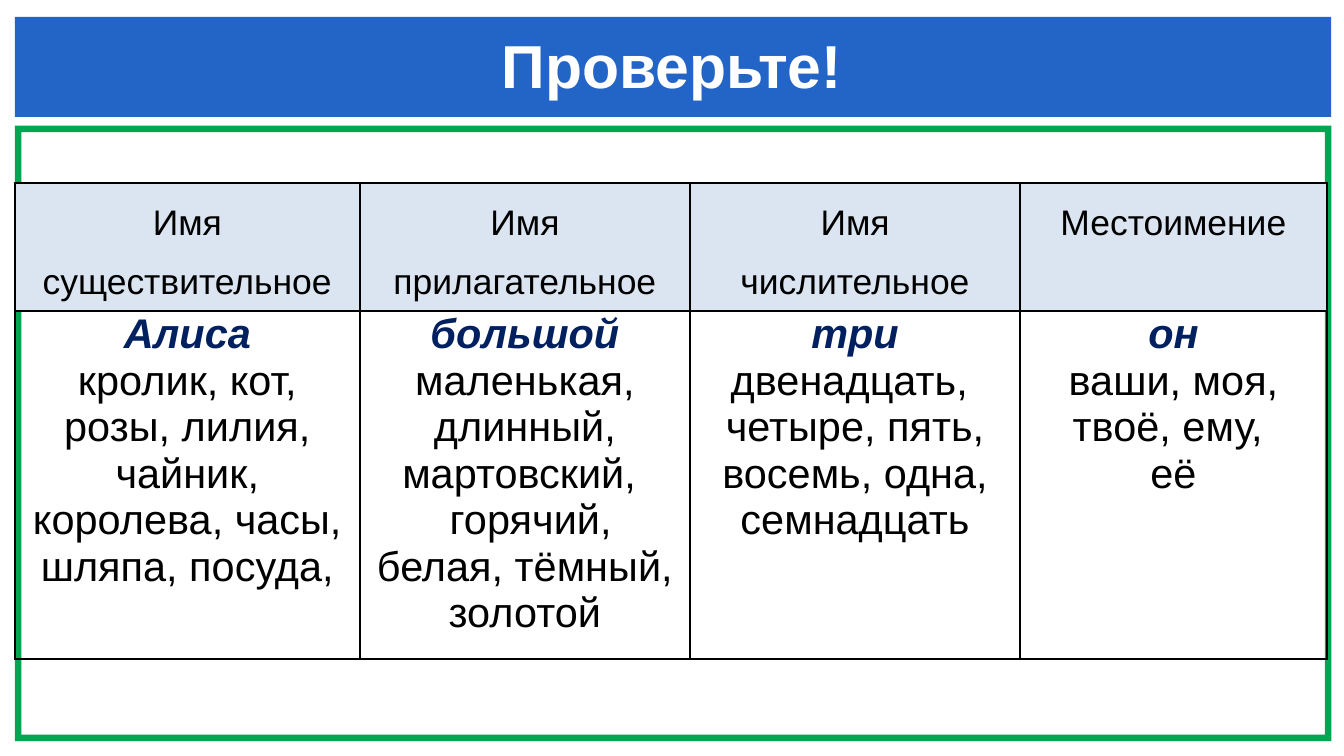
from dataclasses import dataclass

from lxml import etree
from pptx import Presentation
from pptx.dml.color import RGBColor
from pptx.enum import shapes, text
from pptx.oxml import ns
from pptx.util import Inches, Pt


@dataclass(frozen=True)
class Theme:
    font: str = "Arial"
    banner: str = "2365C7"
    frame: str = "00A650"
    header: str = "DBE5F1"
    ink: str = "000000"
    example: str = "002060"
    white: str = "FFFFFF"
    title_size: float = 20.5
    header_size: float = 12
    body_size: float = 14
    border: float = 1


PARTS_OF_SPEECH = [
    ("Имя существительное",
     ["Алиса", "кролик, кот,", "розы, лилия, чайник,",
      "королева, часы, шляпа, посуда,"]),
    ("Имя прилагательное",
     ["большой", "маленькая, длинный,", "мартовский, ",
      " горячий, белая, тёмный, золотой"]),
    ("Имя числительное",
     ["три", "двенадцать, ", "четыре, пять, восемь, одна, семнадцать"]),
    ("Местоимение",
     ["он", "ваши, моя,", "твоё, ему, ", "её"]),
]
COLUMN_WIDTHS = [1.62, 1.55, 1.55, 1.44]
ROW_HEIGHTS = [0.6, 1.53]


class SlideBuilder:
    def __init__(self, slide, theme):
        self.slide = slide
        self.theme = theme

    def block(self, preset, left, top, width, height, color):
        shape = self.slide.shapes.add_shape(
            preset, Inches(left), Inches(top), Inches(width), Inches(height))
        shape.shadow.inherit = False
        shape.fill.solid()
        shape.fill.fore_color.rgb = RGBColor.from_string(color)
        shape.line.fill.background()
        return shape

    def frame(self, left, top, width, height, thickness):
        outline = self.block(shapes.MSO_SHAPE.FRAME, left, top, width, height,
                             self.theme.frame)
        outline.adjustments[0] = thickness / min(width, height)

    def title(self, left, top, width, height, wording):
        box = self.slide.shapes.add_textbox(
            Inches(left), Inches(top), Inches(width), Inches(height))
        body = box.text_frame
        body.word_wrap = True
        body.margin_left = body.margin_right = 0
        body.margin_top = body.margin_bottom = 0
        self.set_lines(body, [wording], self.theme.title_size,
                       self.theme.white)
        body.paragraphs[0].font.bold = True

    def set_lines(self, body, lines, size, color):
        body.text = "\n".join(lines)
        for paragraph in body.paragraphs:
            paragraph.alignment = text.PP_ALIGN.CENTER
            font = paragraph.font
            font.name, font.size = self.theme.font, Pt(size)
            font.bold = font.italic = False
            font.color.rgb = RGBColor.from_string(color)

    def border(self, cell):
        properties = cell._tc.get_or_add_tcPr()
        for index, side in enumerate(("lnL", "lnR", "lnT", "lnB")):
            line = etree.Element(ns.qn(f"a:{side}"),
                                 w=str(Pt(self.theme.border)))
            fill = etree.SubElement(line, ns.qn("a:solidFill"))
            etree.SubElement(fill, ns.qn("a:srgbClr"), val=self.theme.ink)
            properties.insert(index, line)

    def cell(self, cell, lines, size):
        cell.margin_left = cell.margin_right = Inches(0.06)
        cell.margin_top = cell.margin_bottom = 0
        self.set_lines(cell.text_frame, lines, size, self.theme.ink)
        cell.fill.background()
        self.border(cell)

    def word_table(self, left, top, columns, widths, heights):
        """Add one column per (heading, words); the first word is the example."""
        table = self.slide.shapes.add_table(
            len(heights), len(widths), Inches(left), Inches(top),
            Inches(sum(widths)), Inches(sum(heights))).table
        table.first_row = table.horz_banding = False
        for row, height in zip(table.rows, heights):
            row.height = Inches(height)
        for index, (heading, words) in enumerate(columns):
            table.columns[index].width = Inches(widths[index])

            header = table.cell(0, index)
            self.cell(header, [heading], self.theme.header_size)
            header.fill.solid()
            header.fill.fore_color.rgb = RGBColor.from_string(self.theme.header)
            header.text_frame.paragraphs[0].line_spacing = 1.5

            word_list = table.cell(1, index)
            self.cell(word_list, words, self.theme.body_size)
            example = word_list.text_frame.paragraphs[0].font
            example.bold = example.italic = True
            example.color.rgb = RGBColor.from_string(self.theme.example)


def main():
    presentation = Presentation()
    presentation.slide_width = Inches(6.31)
    presentation.slide_height = Inches(3.55)
    theme = Theme()
    builder = SlideBuilder(
        presentation.slides.add_slide(presentation.slide_layouts[6]), theme)

    builder.frame(0.07, 0.59, 6.18, 2.89, 0.03)
    builder.block(shapes.MSO_SHAPE.RECTANGLE, 0.07, 0.08, 6.18, 0.47,
                  theme.banner)
    builder.title(0.33, 0.13, 5.65, 0.35, "Проверьте!")
    builder.word_table(0.07, 0.86, PARTS_OF_SPEECH, COLUMN_WIDTHS, ROW_HEIGHTS)

    presentation.save("out.pptx")


if __name__ == "__main__":
    main()
